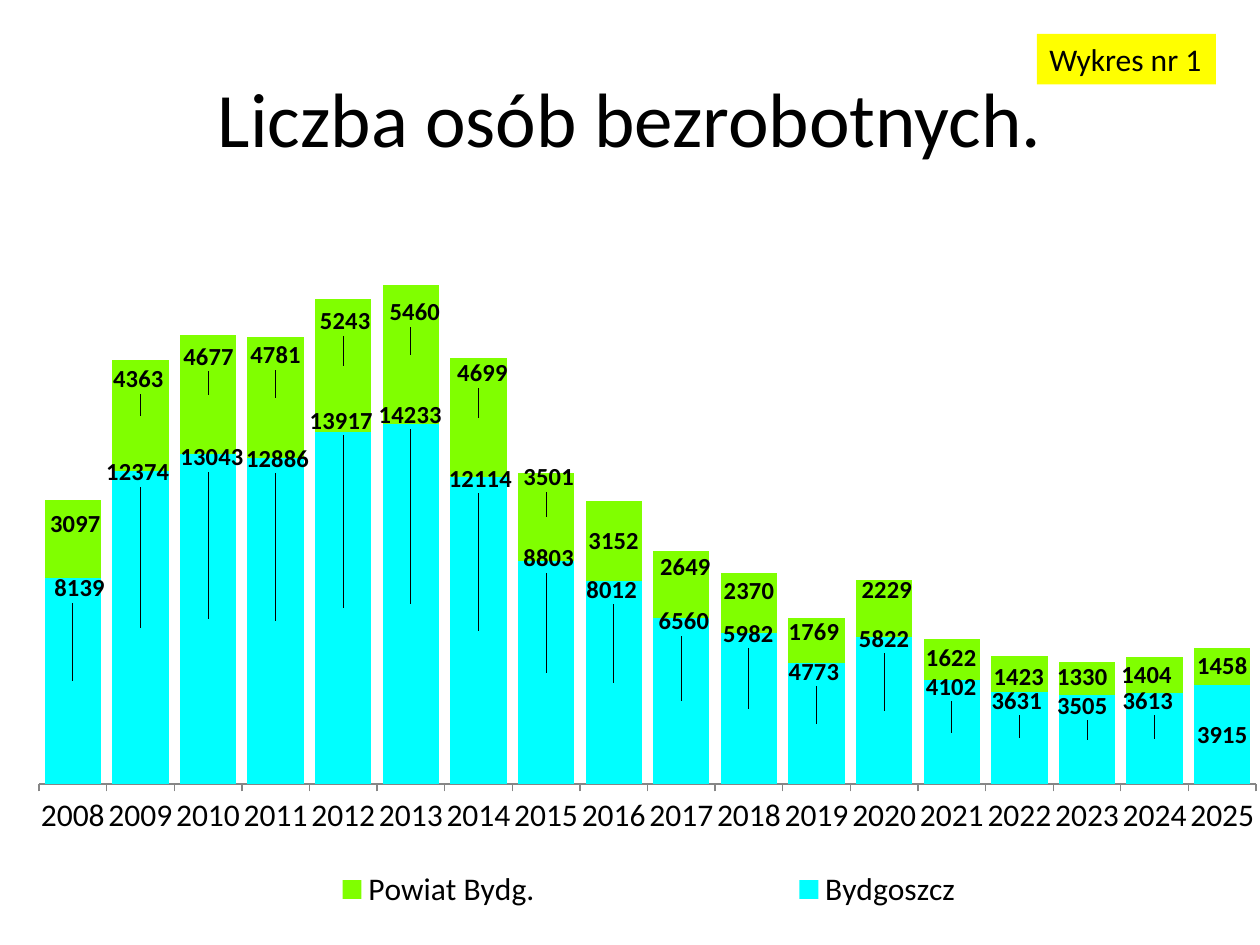
from dataclasses import dataclass
from typing import Optional

from lxml import etree
from pptx import Presentation
from pptx.chart.data import CategoryChartData
from pptx.dml.color import RGBColor
from pptx.enum.chart import XL_CHART_TYPE, XL_LABEL_POSITION, XL_LEGEND_POSITION, XL_TICK_LABEL_POSITION, XL_TICK_MARK
from pptx.enum.shapes import MSO_SHAPE
from pptx.enum.text import MSO_ANCHOR, MSO_AUTO_SIZE, PP_ALIGN
from pptx.oxml.ns import qn
from pptx.util import Inches, Pt

STACKED = XL_CHART_TYPE.COLUMN_STACKED
CENTER_LABEL = XL_LABEL_POSITION.CENTER
LEGEND_RIGHT = XL_LEGEND_POSITION.RIGHT
LABELS_LOW = XL_TICK_LABEL_POSITION.LOW
TICK_OUT, TICK_NONE = XL_TICK_MARK.OUTSIDE, XL_TICK_MARK.NONE
RECT = MSO_SHAPE.RECTANGLE
MIDDLE = MSO_ANCHOR.MIDDLE
GROW = MSO_AUTO_SIZE.SHAPE_TO_FIT_TEXT
LEFT, CENTER = PP_ALIGN.LEFT, PP_ALIGN.CENTER

BLACK = RGBColor(0x00, 0x00, 0x00)
GREY = RGBColor(0x86, 0x86, 0x86)
YELLOW = RGBColor(0xFF, 0xFF, 0x00)
CYAN = RGBColor(0x00, 0xFF, 0xFF)
LIME = RGBColor(0x80, 0xFF, 0x00)
FONT = "Calibri"
CELL = 0.1
AXIS_MAX = 25000
FIRST_YEAR = 2008


@dataclass(frozen=True)
class Box:
    col: float
    row: float
    cols: float
    rows: float

    def place(self) -> list:
        return [Inches(CELL * n) for n in (self.col, self.row, self.cols, self.rows)]


@dataclass(frozen=True)
class Bar:
    value: int
    shift: float = 0
    label_row: Optional[float] = None


@dataclass(frozen=True)
class Group:
    name: str
    color: RGBColor
    bars: list[Bar]


TITLE = Box(5, 3, 90, 12.5)
CHART = Box(0, 12, 100, 64.4)
TAG = Box(82.3, 2.7, 14.2, 4)
PLOT = {"x": 0.031, "y": 0, "w": 0.966, "h": 0.78}
LEGEND = {"x": 0.07, "y": 0.86, "w": 0.89, "h": 0.1}

CITY = Group("Bydgoszcz", CYAN, [
    Bar(8139, 0.1, 46.7), Bar(12374, -0.04, 37.5), Bar(13043, 0.06, 36.3),
    Bar(12886, 0.03, 36.4), Bar(13917, -0.03, 33.4), Bar(14233, -0.01, 32.9),
    Bar(12114, 0.03, 38), Bar(8803, 0.04, 44.3), Bar(8012, -0.03, 46.8),
    Bar(6560, 0.04, 49.3), Bar(5982, -0.01, 50.3), Bar(4773, -0.04, 53.3),
    Bar(5822, 0, 50.7), Bar(4102, -0.01, 54.5), Bar(3631, -0.04, 55.6),
    Bar(3505, -0.07, 56), Bar(3613, -0.1, 55.6), Bar(3915)])
COUNTY = Group("Powiat Bydg.", LIME, [
    Bar(3097, 0.04, 41.6), Bar(4363, -0.03, 30.1), Bar(4677, 0.01, 28.3),
    Bar(4781, 0, 28.2), Bar(5243, 0.03, 25.5), Bar(5460, 0.06, 24.8),
    Bar(4699, 0.06, 29.6), Bar(3501, 0.04, 37.9), Bar(3152),
    Bar(2649, 0.06, 45), Bar(2370, 0, 46.9), Bar(1769, -0.04, 50.2),
    Bar(2229, 0.04, 46.8), Bar(1622, -0.01, 52.2), Bar(1423, -0.01, 53.7),
    Bar(1330, -0.07, 53.7), Bar(1404, -0.12, 53.6), Bar(1458)])
GROUPS = [CITY, COUNTY]


def set_font(font, size: float, bold: bool = False) -> None:
    for name, value in {"name": FONT, "size": Pt(size), "bold": bold}.items():
        setattr(font, name, value)
    font.color.rgb = BLACK


def write(tf, text: str, size: float, align) -> None:
    p = tf.paragraphs[0]
    p.alignment = align
    r = p.add_run()
    r.text = text
    set_font(r.font, size)


def set_layout(parent, index: int, values: dict[str, float], modes: dict[str, str]) -> None:
    for old in parent.findall(qn("c:layout")):
        parent.remove(old)
    layout = etree.Element(qn("c:layout"))
    manual = etree.SubElement(layout, qn("c:manualLayout"))
    for tag, value in {**modes, **values}.items():
        etree.SubElement(manual, qn(f"c:{tag}")).set("val", str(value))
    parent.insert(index, layout)


def label_bars(series, bars: list[Bar], bases: list[int]) -> None:
    labels = series.data_labels
    labels.show_value = True
    labels.position = CENTER_LABEL
    set_font(labels.font, 14, True)
    for i, (bar, base) in enumerate(zip(bars, bases)):
        if bar.label_row is None:
            continue
        label = series.points[i].data_label
        set_font(label.font, 14, True)
        label.position = CENTER_LABEL
        middle = PLOT["h"] * (1 - (base + bar.value / 2) / AXIS_MAX)
        offset = {"x": round(bar.shift * PLOT["w"] / len(bars), 4),
                  "y": round((bar.label_row - CHART.row) / CHART.rows - middle, 4)}
        set_layout(labels._element.findall(qn("c:dLbl"))[i - sum(
            b.label_row is None for b in bars[:i])], 1, offset, {})


def add_bars(s, groups: list[Group]) -> None:
    data = CategoryChartData()
    data.categories = [str(FIRST_YEAR + i) for i in range(len(groups[0].bars))]
    for group in groups:
        data.add_series(group.name, [bar.value for bar in group.bars])
    chart = s.shapes.add_chart(STACKED, *CHART.place(), data).chart
    set_font(chart.font, 18)
    chart.has_title = False

    plot = chart.plots[0]
    for name, value in {"gap_width": 20, "overlap": 100, "vary_by_categories": False}.items():
        setattr(plot, name, value)
    bases = [0] * len(groups[0].bars)
    for series, group in zip(plot.series, groups):
        series.format.fill.solid()
        series.format.fill.fore_color.rgb = group.color
        label_bars(series, group.bars, bases)
        bases = [base + bar.value for base, bar in zip(bases, group.bars)]

    years, counts = chart.category_axis, chart.value_axis
    for name, value in {"major_tick_mark": TICK_OUT, "minor_tick_mark": TICK_NONE,
                        "tick_label_position": LABELS_LOW, "has_major_gridlines": False}.items():
        setattr(years, name, value)
    years.format.line.color.rgb = GREY
    set_font(years.tick_labels.font, 18)
    years._element.find(f"{qn('c:txPr')}/{qn('a:bodyPr')}").set("rot", "0")
    for name, value in {"visible": False, "has_major_gridlines": False,
                        "minimum_scale": 0, "maximum_scale": AXIS_MAX}.items():
        setattr(counts, name, value)

    chart.has_legend = True
    legend = chart.legend
    legend.position = LEGEND_RIGHT
    legend.include_in_layout = False
    set_font(legend.font, 18)
    edges = {"xMode": "edge", "yMode": "edge"}
    set_layout(legend._element, 1, LEGEND, edges)
    set_layout(plot._element.getparent(), 0, PLOT, {"layoutTarget": "inner", **edges})


def add_tag(s, text: str) -> None:
    sp = s.shapes.add_shape(RECT, *TAG.place())
    sp.shadow.inherit = False
    sp.fill.solid()
    sp.fill.fore_color.rgb = YELLOW
    sp.line.fill.background()
    tf = sp.text_frame
    tf.word_wrap = False
    tf.auto_size = GROW
    write(tf, text, 18, LEFT)


def main() -> None:
    prs = Presentation()
    prs.slide_width, prs.slide_height = Inches(10), Inches(7.5)
    s = prs.slides.add_slide(prs.slide_layouts[5])
    title = s.shapes.title
    title.left, title.top, title.width, title.height = TITLE.place()
    title.text_frame.vertical_anchor = MIDDLE
    write(title.text_frame, "Liczba osób bezrobotnych.", 44, CENTER)
    add_bars(s, GROUPS)
    add_tag(s, "Wykres nr 1")
    prs.save("out.pptx")


if __name__ == "__main__":
    main()
